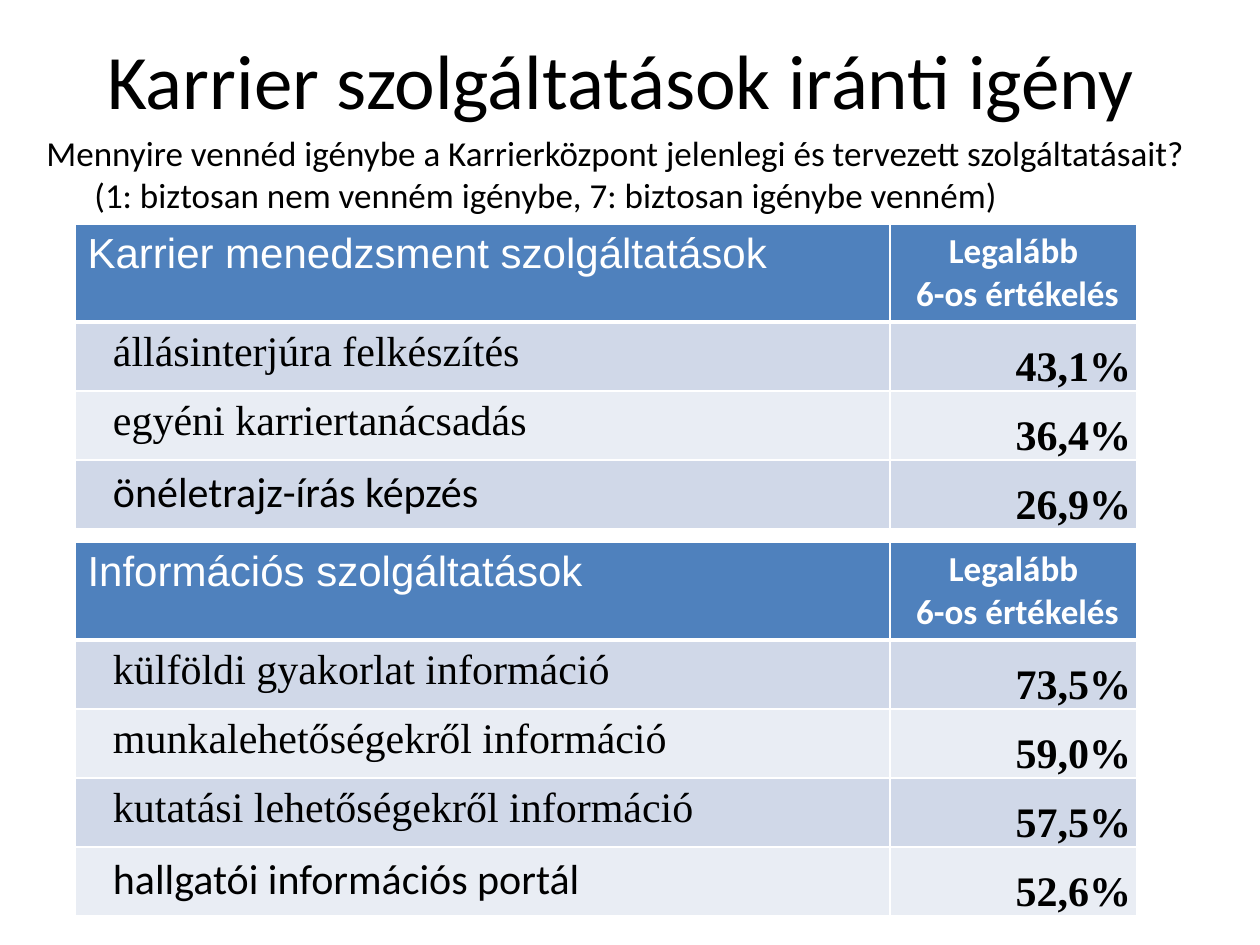
from dataclasses import dataclass

from lxml.etree import SubElement
from pptx import Presentation
from pptx.dml.color import RGBColor
from pptx.enum.text import MSO_ANCHOR as Anchor, PP_ALIGN as Align
from pptx.oxml.ns import qn
from pptx.slide import Slide
from pptx.table import _Cell as Cell
from pptx.text.text import TextFrame, _Paragraph as Paragraph
from pptx.util import Emu, Pt

EMU_PER_PX = 914400 / 126
BLACK = RGBColor(0x00, 0x00, 0x00)
WHITE = RGBColor(0xFF, 0xFF, 0xFF)
HEADER_BLUE = RGBColor(0x4F, 0x81, 0xBD)
BANDS = (RGBColor(0xD0, 0xD8, 0xE8), RGBColor(0xE9, 0xED, 0xF4))

TABLE_LEFT = 75
COLUMN_WIDTHS = (815, 247)
HEADER_HEIGHT, ROW_HEIGHT = 98, 69
CELL_SIDE_MARGIN, SERVICE_INDENT = 6, 32
RATING_HEADING = "Legalább\v 6-os értékelés"


@dataclass
class Service:
    name: str
    share: str
    font: str = "Times New Roman"


@dataclass
class ServiceTable:
    top: int
    heading: str
    services: list[Service]


TABLES = [
    ServiceTable(224, "Karrier menedzsment szolgáltatások", [
        Service("állásinterjúra felkészítés", "43,1%"),
        Service("egyéni karriertanácsadás", "36,4%"),
        Service("önéletrajz-írás képzés", "26,9%", "Calibri"),
    ]),
    ServiceTable(542, "Információs szolgáltatások", [
        Service("külföldi gyakorlat információ", "73,5%"),
        Service("munkalehetőségekről információ", "59,0%"),
        Service("kutatási lehetőségekről információ", "57,5%"),
        Service("hallgatói információs portál", "52,6%", "Calibri"),
    ]),
]


def px(length: int) -> Emu:
    return Emu(round(length * EMU_PER_PX))


def write(frame: TextFrame, text: str, font: str, size: int, color: RGBColor,
          align: Align = Align.LEFT, bold: bool = False) -> Paragraph:
    frame.text = text
    paragraph = frame.paragraphs[0]
    paragraph.alignment = align
    for run in paragraph.runs:
        run.font.name = font
        run.font.size = Pt(size)
        run.font.bold = bold
        run.font.color.rgb = color
    return paragraph


def indent(paragraph: Paragraph, left: int, first_line: int = 0) -> None:
    properties = paragraph._p.get_or_add_pPr()
    properties.set("marL", str(px(left)))
    properties.set("indent", str(px(first_line)))


def add_text_box(slide: Slide, left: int, top: int, width: int, height: int,
                 anchor: Anchor) -> TextFrame:
    frame = slide.shapes.add_textbox(px(left), px(top), px(width), px(height)).text_frame
    frame.word_wrap = True
    frame.vertical_anchor = anchor
    return frame


def style_cell(cell: Cell, fill: RGBColor, bottom_width: int = 1) -> None:
    """Fill the cell and give it white borders."""
    cell.fill.solid()
    cell.fill.fore_color.rgb = fill
    properties = cell._tc.get_or_add_tcPr()
    for position, side in enumerate("LRTB"):
        width = bottom_width if side == "B" else 1
        line = SubElement(properties, qn(f"a:ln{side}"), w=str(Pt(width)))
        SubElement(SubElement(line, qn("a:solidFill")), qn("a:srgbClr"), val=str(WHITE))
        properties.insert(position, line)


def add_service_table(slide: Slide, content: ServiceTable) -> None:
    count = len(content.services)
    table = slide.shapes.add_table(
        count + 1, 2, px(TABLE_LEFT), px(content.top), px(sum(COLUMN_WIDTHS)),
        px(HEADER_HEIGHT + count * ROW_HEIGHT)).table
    for column, width in zip(table.columns, COLUMN_WIDTHS):
        column.width = px(width)
    for index, row in enumerate(table.rows):
        row.height = px(ROW_HEIGHT if index else HEADER_HEIGHT)

    heading, rating = table.rows[0].cells
    write(heading.text_frame, content.heading, "Arial", 24, WHITE)
    write(rating.text_frame, RATING_HEADING, "Calibri", 20, WHITE, Align.CENTER, True)
    for cell in (heading, rating):
        style_cell(cell, HEADER_BLUE, bottom_width=3)

    for index, service in enumerate(content.services):
        name, share = table.rows[index + 1].cells
        for cell in (name, share):
            style_cell(cell, BANDS[index % 2])
            cell.margin_left = cell.margin_right = px(CELL_SIDE_MARGIN)
            cell.margin_top = cell.margin_bottom = 0
        paragraph = write(name.text_frame, service.name, service.font, 24, BLACK)
        indent(paragraph, SERVICE_INDENT)
        paragraph.line_spacing = 1.15
        paragraph.space_after = Pt(6)
        share.vertical_anchor = Anchor.BOTTOM
        paragraph = write(share.text_frame, service.share, "Times New Roman", 24, BLACK,
                          Align.RIGHT, True)
        paragraph.line_spacing = 1.15


def main() -> None:
    presentation = Presentation()
    presentation.slide_width, presentation.slide_height = px(1260), px(945)
    slide = presentation.slides.add_slide(presentation.slide_layouts[6])

    title = add_text_box(slide, 54, 0, 1134, 158, Anchor.MIDDLE)
    write(title, "Karrier szolgáltatások iránti igény", "Calibri", 44, BLACK, Align.CENTER)

    question = add_text_box(slide, 34, 125, 1191, 673, Anchor.TOP)
    paragraph = write(
        question,
        "Mennyire vennéd igénybe a Karrierközpont jelenlegi és tervezett szolgáltatásait? "
        "(1: biztosan nem venném igénybe, 7: biztosan igénybe venném)",
        "Calibri", 20, BLACK)
    indent(paragraph, 48, -48)

    for content in TABLES:
        add_service_table(slide, content)
    presentation.save("out.pptx")


if __name__ == "__main__":
    main()
